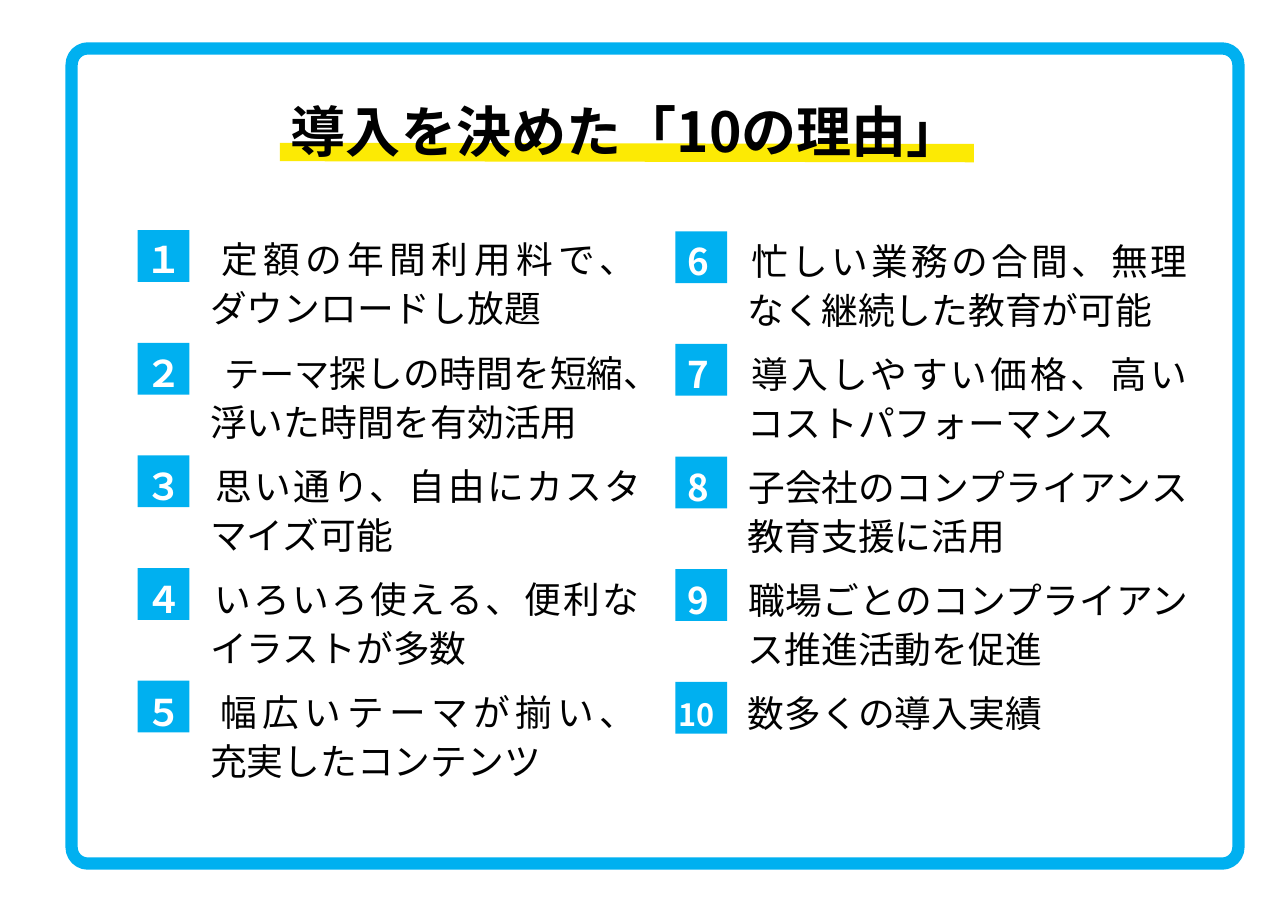
from lxml import etree
from pptx import Presentation
from pptx.dml.color import RGBColor
from pptx.enum.lang import MSO_LANGUAGE_ID
from pptx.enum.shapes import MSO_CONNECTOR, MSO_SHAPE
from pptx.enum.text import MSO_ANCHOR, MSO_AUTO_SIZE, PP_ALIGN
from pptx.oxml.ns import qn
from pptx.util import Inches, Pt

BLUE = RGBColor(0x00, 0xB0, 0xF0)
YELLOW = RGBColor(0xFC, 0xEA, 0x04)
BLACK = RGBColor(0x00, 0x00, 0x00)
WHITE = RGBColor(0xFF, 0xFF, 0xFF)

FONT = "Noto Sans CJK JP"
TITLE = {"size": Pt(36), "bold": True}
NUMBER = {"size": Pt(24), "bold": True, "color": WHITE}
NUMBER_TEN = {**NUMBER, "size": Pt(20)}
BODY = {"size": Pt(24), "bold": False}

LEFT_REASONS = [
    [("１\t", NUMBER), ("定額の年間利用料で、\nダウンロードし放題", BODY)],
    [("２\t", NUMBER), ("　", {"size": Pt(9)}), ("テーマ", {"size": Pt(23)}),
     ("探しの時間を短縮、浮いた時間を有効活用", BODY)],
    [("３\t", NUMBER), ("思い通り、自由にカスタマイズ可能", BODY)],
    [("４\t", NUMBER), ("いろいろ使える、便利な\nイラストが多数", BODY)],
    [("５\t", NUMBER), ("幅広いテーマが揃い、\n充実したコンテンツ", BODY)],
]
RIGHT_REASONS = [
    [("6\t", NUMBER), ("忙しい業務の合間、無理なく継続した教育が可能", BODY)],
    [("7\t", NUMBER), ("導入しやすい価格、高いコストパフォーマンス", BODY)],
    [("8\t", NUMBER), ("子会社のコンプライアンス教育支援に活用", BODY)],
    [("9\t", NUMBER), ("職場ごとのコンプライアンス推進活動を促進", BODY)],
    [("\t数多くの導入実績", BODY)],
]


class SlideBuilder:
    def __init__(self, slide, font_name):
        self.slide = slide
        self.font_name = font_name

    def add_run(self, paragraph, text, values):
        """Add one run; a newline in the text becomes a line break."""
        for index, line in enumerate(text.split("\n")):
            if index:
                paragraph.add_line_break()
            run = paragraph.add_run()
            run.text = line
            run.font.name = self.font_name
            run.font.language_id = MSO_LANGUAGE_ID.JAPANESE
            run.font.color.rgb = values.get("color", BLACK)
            for name, value in values.items():
                if name != "color":
                    setattr(run.font, name, value)

    def set_east_asian_font(self, shape):
        for properties in shape.element.iter(qn("a:rPr")):
            etree.SubElement(properties, qn("a:ea"), typeface=self.font_name)

    def title(self, text, position):
        title = self.slide.shapes.title
        title.left, title.top, title.width, title.height = map(Inches, position)
        frame = title.text_frame
        frame.vertical_anchor = MSO_ANCHOR.TOP
        frame.auto_size = MSO_AUTO_SIZE.NONE
        paragraph = frame.paragraphs[0]
        paragraph.alignment = PP_ALIGN.JUSTIFY
        paragraph.space_before = Pt(0)
        self.add_run(paragraph, text, TITLE)
        self.set_east_asian_font(title)
        # Bring the title in front of its marker line
        title.element.getparent().append(title.element)

    def rectangle(self, kind, position, fill=None, line_width=None):
        shape = self.slide.shapes.add_shape(kind, *map(Inches, position))
        shape.shadow.inherit = False
        if fill is None:
            shape.fill.background()
        else:
            shape.fill.solid()
            shape.fill.fore_color.rgb = fill
        if line_width is None:
            shape.line.fill.background()
        else:
            shape.line.color.rgb = BLUE
            shape.line.width = Pt(line_width)
        return shape

    def line(self, points, color, width):
        connector = self.slide.shapes.add_connector(
            MSO_CONNECTOR.STRAIGHT, *map(Inches, points))
        connector.line.color.rgb = color
        connector.line.width = Pt(width)
        properties = connector.element.find(qn("p:spPr"))
        etree.SubElement(properties, qn("a:effectLst"))

    def text_box(self, position, wrap=True):
        box = self.slide.shapes.add_textbox(*map(Inches, position))
        box.text_frame.word_wrap = wrap
        return box

    def reasons(self, position, items, first_line, left_aligned=()):
        box = self.text_box(position)
        frame = box.text_frame
        for index, runs in enumerate(items):
            paragraph = frame.add_paragraph() if index else frame.paragraphs[0]
            last_tab_only = len(runs) == 1
            indent = -0.59 if last_tab_only else first_line
            properties = paragraph._p.get_or_add_pPr()
            properties.set("marL", str(Inches(0.59)))
            properties.set("indent", str(Inches(indent)))
            values = {
                "alignment": (PP_ALIGN.LEFT if index in left_aligned
                              else PP_ALIGN.JUSTIFY),
                "line_spacing": Pt(32),
                "space_before": Pt(10 if index else 0),
            }
            for name, value in values.items():
                setattr(paragraph, name, value)
            for text, style in runs:
                self.add_run(paragraph, text, style)
        self.set_east_asian_font(box)

    def label(self, position, text, style):
        box = self.text_box(position, wrap=False)
        self.add_run(box.text_frame.paragraphs[0], text, style)
        self.set_east_asian_font(box)


def main():
    presentation = Presentation()
    presentation.slide_width = Inches(11.69)
    presentation.slide_height = Inches(8.27)
    slide = presentation.slides.add_slide(presentation.slide_layouts[5])
    builder = SlideBuilder(slide, FONT)

    # Frame
    frame = builder.rectangle(MSO_SHAPE.ROUNDED_RECTANGLE,
                              (0.65, 0.44, 10.59, 7.4), line_width=8)
    frame.adjustments[0] = 0.02

    # Title with its marker line
    builder.line((2.54, 1.38, 8.84, 1.39), YELLOW, 12)
    builder.title("導入を決めた「10の理由」", (2.54, 0.83, 6.59, 0.55))

    # Number squares
    row_step = (6.18 - 2.09) / 4
    for left, top in ((1.25, 2.09), (6.13, 2.1)):
        for row in range(5):
            builder.rectangle(MSO_SHAPE.RECTANGLE,
                              (left, top + row * row_step, 0.47, 0.47), BLUE)

    # Reasons
    builder.reasons((1.22, 2.06, 4.7, 5.76), LEFT_REASONS, -0.59, left_aligned=(1,))
    builder.reasons((6.1, 2.07, 4.78, 5.76), RIGHT_REASONS, -0.55)
    builder.label((6.06, 6.27, 0.58, 0.44), "10", NUMBER_TEN)

    presentation.save("out.pptx")


if __name__ == "__main__":
    main()
